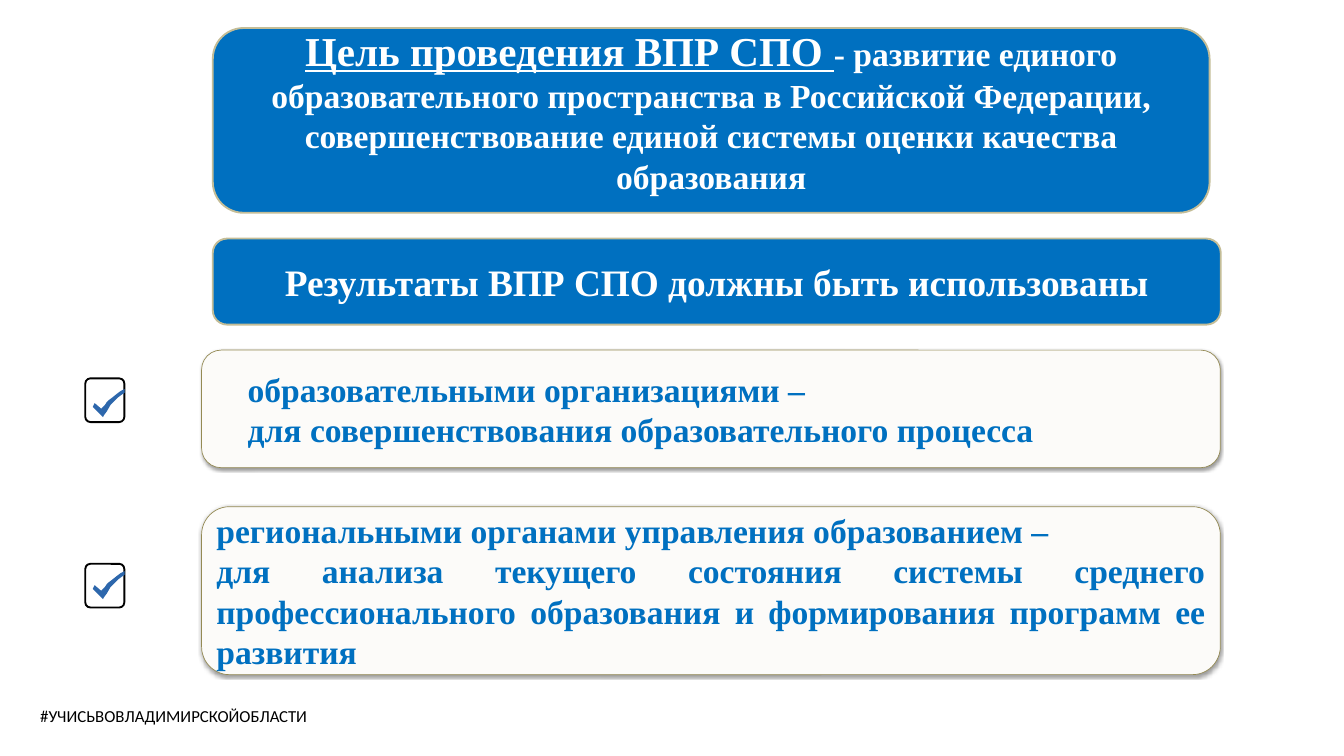
from dataclasses import dataclass
from lxml import etree
from pptx import Presentation
from pptx.dml.color import RGBColor
from pptx.enum.shapes import MSO_SHAPE
from pptx.enum.text import MSO_ANCHOR, PP_ALIGN
from pptx.oxml.ns import qn
from pptx.util import Pt

ROUNDED = MSO_SHAPE.ROUNDED_RECTANGLE
MIDDLE = MSO_ANCHOR.MIDDLE
CENTER = PP_ALIGN.CENTER
JUSTIFY = PP_ALIGN.JUSTIFY


@dataclass(frozen=True)
class Theme:
    blue: RGBColor = RGBColor(0x00, 0x70, 0xC0)
    tick: RGBColor = RGBColor(0x2D, 0x67, 0xAC)
    white: RGBColor = RGBColor(0xFF, 0xFF, 0xFF)
    black: RGBColor = RGBColor(0x00, 0x00, 0x00)
    cream: RGBColor = RGBColor(0xFC, 0xFB, 0xF9)
    sand: RGBColor = RGBColor(0xC4, 0xBD, 0x97)
    olive: RGBColor = RGBColor(0x94, 0x8A, 0x54)
    serif: str = "Times New Roman"
    sans: str = "Calibri"
    goal: int = 44
    heading: int = 40
    body: int = 36
    tag: int = 18


theme = Theme()
deck = Presentation()
deck.slide_width, deck.slide_height = Pt(1440), Pt(810)
page = deck.slides.add_slide(deck.slide_layouts[6])


def add_panel(left, top, width, height, fill, line, line_width):
    panel = page.shapes.add_shape(ROUNDED, Pt(left), Pt(top), Pt(width), Pt(height))
    panel.shadow.inherit = False
    if fill is None:
        panel.fill.background()
    else:
        panel.fill.solid()
        panel.fill.fore_color.rgb = fill
    panel.line.color.rgb = line
    panel.line.width = Pt(line_width)
    panel.text_frame.word_wrap = True
    panel.text_frame.vertical_anchor = MIDDLE
    return panel


def format_text(frame, align, size, color, face=theme.serif, bold=True):
    for paragraph in frame.paragraphs:
        paragraph.alignment = align
        for span in paragraph.runs:
            span.font.name = face
            span.font.size = Pt(size)
            span.font.bold = bold
            span.font.color.rgb = color


goal = add_panel(228, 30, 1068, 198, theme.blue, theme.sand, 2)
goal_text = goal.text_frame
goal_text.margin_bottom = Pt(24)
lead = goal_text.paragraphs[0].add_run()
lead.text = "Цель проведения ВПР СПО "
goal_text.paragraphs[0].add_run().text = (
    "- развитие единого образовательного пространства в Российской Федерации, "
    "совершенствование единой системы оценки качества образования"
)
format_text(goal_text, CENTER, theme.body, theme.white)
lead.font.size = Pt(theme.goal)
lead.font.underline = True

results = add_panel(228, 255.6, 1080, 92.2, theme.blue, theme.sand, 2)
results.text_frame.text = "Результаты ВПР СПО должны быть использованы"
format_text(results.text_frame, CENTER, theme.heading, theme.white)

users = [
    (375.1, 126, 43.2, 405.4, 416.9,
     "образовательными организациями –\n"
     "для совершенствования образовательного процесса"),
    (542.9, 180, 7.2, 604.1, 612,
     "региональными органами управления образованием –\n"
     "для анализа текущего состояния системы среднего профессионального "
     "образования и формирования программ ее развития"),
]
tick_points = [
    (30.2, 2.2), (25.9, 5), (20.9, 8.6), (17.3, 11.5), (15.1, 13.7), (13, 16.6),
    (9.4, 20.9), (2.2, 15.1), (0, 18.7), (10.8, 30.2), (12.2, 28.1), (15.1, 23.8),
    (19.4, 17.3), (23.8, 12.2), (26.6, 8.6), (31, 5.8), (34.2, 3.6),
]
for top, height, indent, box_top, tick_top, wording in users:
    card = add_panel(216, top, 1091.5, height, theme.cream, theme.olive, 0.75)
    card.text_frame.margin_left = Pt(indent)
    card.text_frame.text = wording
    format_text(card.text_frame, JUSTIFY, theme.body, theme.blue)
    effects = card._element.spPr.find(qn("a:effectLst"))
    shadow = etree.SubElement(effects, qn("a:outerShdw"), blurRad=str(Pt(3.1)),
                              dist=str(Pt(1.6)), dir="5400000", rotWithShape="0")
    shade = etree.SubElement(shadow, qn("a:srgbClr"), val=str(theme.black))
    etree.SubElement(shade, qn("a:alpha"), val="38000")

    checkbox = add_panel(91.4, box_top, 41.8, 46.8, None, theme.black, 2)
    checkbox.adjustments[0] = 0.13

    outline = page.shapes.build_freeform(34.2, 0, scale=Pt(1))
    outline.add_line_segments(tick_points, close=True)
    tick = outline.convert_to_shape(Pt(99.4), Pt(tick_top))
    tick.shadow.inherit = False
    tick.fill.solid()
    tick.fill.fore_color.rgb = theme.tick
    tick.line.fill.background()

hashtag = page.shapes.add_textbox(Pt(36), Pt(753.1), Pt(307.4), Pt(28.8))
hashtag.text_frame.word_wrap = False
hashtag.text_frame.text = "#УЧИСЬВОВЛАДИМИРСКОЙОБЛАСТИ"
format_text(hashtag.text_frame, PP_ALIGN.LEFT, theme.tag, theme.black, theme.sans, False)

deck.save("out.pptx")
